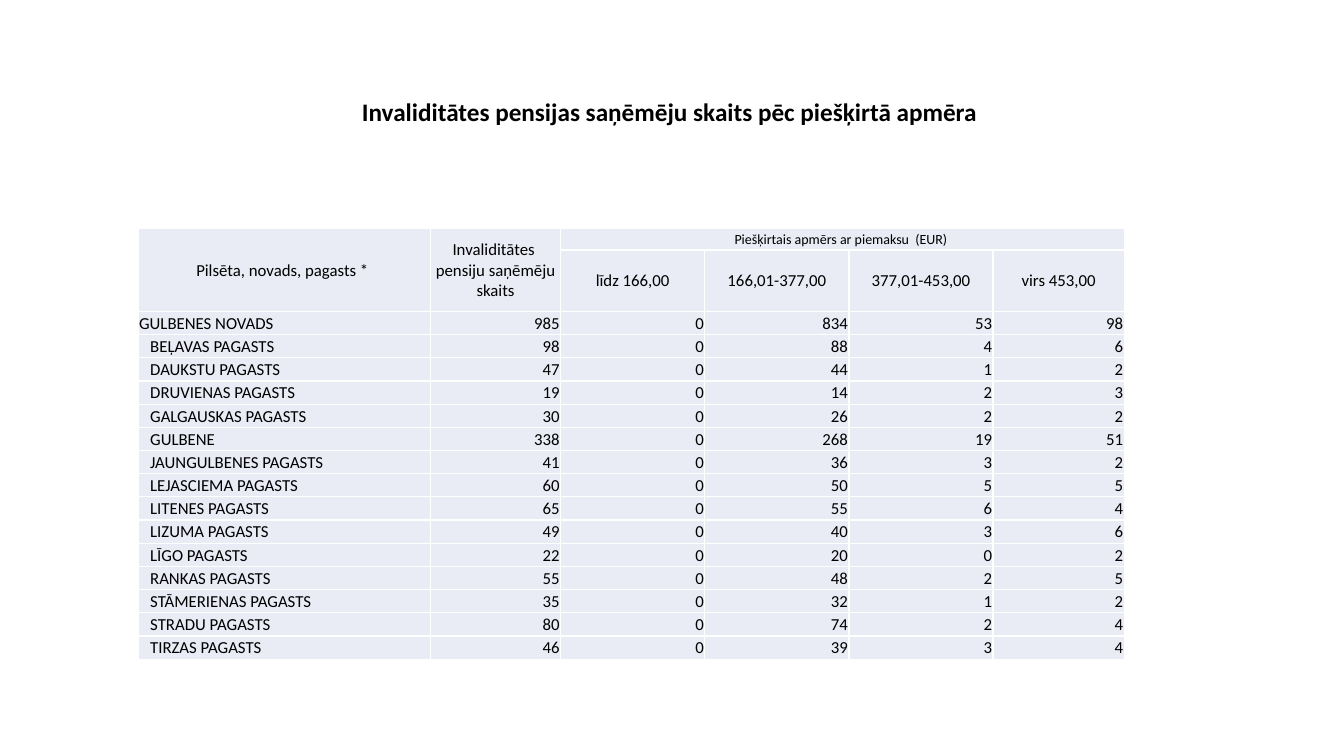
"""Build a slide with a table of disability pension recipients by granted amount."""
from pptx import Presentation
from pptx.dml.color import RGBColor
from pptx.enum.text import MSO_ANCHOR, PP_ALIGN
from pptx.util import Inches, Pt

TITLE = "Invaliditātes pensijas saņēmēju skaits pēc piešķirtā apmēra "
PLACE_HEADING = "Pilsēta, novads, pagasts * "
TOTAL_HEADING = "Invaliditātes  pensiju saņēmēju skaits"
AMOUNT_HEADING = "Piešķirtais apmērs ar piemaksu  (EUR) "
AMOUNT_BANDS = ["līdz 166,00", "166,01-377,00", "377,01-453,00", "virs 453,00"]
RECIPIENTS = [
    ("GULBENES NOVADS", 985, 0, 834, 53, 98),
    ("BEĻAVAS PAGASTS", 98, 0, 88, 4, 6),
    ("DAUKSTU PAGASTS", 47, 0, 44, 1, 2),
    ("DRUVIENAS PAGASTS", 19, 0, 14, 2, 3),
    ("GALGAUSKAS PAGASTS", 30, 0, 26, 2, 2),
    ("GULBENE", 338, 0, 268, 19, 51),
    ("JAUNGULBENES PAGASTS", 41, 0, 36, 3, 2),
    ("LEJASCIEMA PAGASTS", 60, 0, 50, 5, 5),
    ("LITENES PAGASTS", 65, 0, 55, 6, 4),
    ("LIZUMA PAGASTS", 49, 0, 40, 3, 6),
    ("LĪGO PAGASTS", 22, 0, 20, 0, 2),
    ("RANKAS PAGASTS", 55, 0, 48, 2, 5),
    ("STĀMERIENAS PAGASTS", 35, 0, 32, 1, 2),
    ("STRADU PAGASTS", 80, 0, 74, 2, 4),
    ("TIRZAS PAGASTS", 46, 0, 39, 3, 4),
]

BLACK = RGBColor(0x00, 0x00, 0x00)
PALE_BLUE = RGBColor(0xE9, 0xEB, 0xF5)
LEFT, CENTER, RIGHT = PP_ALIGN.LEFT, PP_ALIGN.CENTER, PP_ALIGN.RIGHT
MIDDLE = MSO_ANCHOR.MIDDLE

COLUMN_WIDTHS = [2.9, 1.29, 1.43, 1.43, 1.43, 1.3]
ROW_HEIGHTS = [0.21, 0.56] + [0.23] * len(RECIPIENTS)
HEADER_ROWS = 2
FIRST_BAND = 2
CELL_INSET = 0.01
PARISH_INDENT = 0.12


def set_all(target, values):
    for name, value in values.items():
        setattr(target, name, value)


def write(frame, text, size, align, bold=False):
    paragraph = frame.paragraphs[0]
    paragraph.alignment = align
    run = paragraph.add_run()
    run.text = text
    set_all(run.font, {"name": "Calibri", "size": Pt(size), "bold": bold})
    run.font.color.rgb = BLACK
    return paragraph


def fill_cell(cell, text, align, size=12, indent=CELL_INSET):
    write(cell.text_frame, text, size, align)
    set_all(cell, {
        "vertical_anchor": MIDDLE,
        "margin_left": Inches(indent),
        "margin_top": Inches(CELL_INSET),
        "margin_right": Inches(CELL_INSET),
        "margin_bottom": 0,
    })


def add_title(slide):
    box = slide.shapes.add_textbox(Inches(0.92), Inches(0.4), Inches(11.5), Inches(1.45))
    set_all(box.text_frame, {"word_wrap": True, "vertical_anchor": MIDDLE})
    write(box.text_frame, TITLE, 18, CENTER, bold=True).line_spacing = 0.9


def add_recipients(slide):
    table = slide.shapes.add_table(
        len(ROW_HEIGHTS), len(COLUMN_WIDTHS), Inches(1.37), Inches(2.27),
        Inches(sum(COLUMN_WIDTHS)), Inches(sum(ROW_HEIGHTS))).table
    set_all(table, {"first_row": False, "horz_banding": False})
    for column, width in zip(table.columns, COLUMN_WIDTHS):
        column.width = Inches(width)
    for row, height in zip(table.rows, ROW_HEIGHTS):
        row.height = Inches(height)
    for cell in table.iter_cells():
        cell.fill.solid()
        cell.fill.fore_color.rgb = PALE_BLUE

    for column, heading in enumerate([PLACE_HEADING, TOTAL_HEADING]):
        table.cell(0, column).merge(table.cell(HEADER_ROWS - 1, column))
        fill_cell(table.cell(0, column), heading, CENTER)
    table.cell(0, FIRST_BAND).merge(table.cell(0, len(COLUMN_WIDTHS) - 1))
    fill_cell(table.cell(0, FIRST_BAND), AMOUNT_HEADING, CENTER, size=10)
    for column, band in enumerate(AMOUNT_BANDS, FIRST_BAND):
        fill_cell(table.cell(1, column), band, CENTER)

    for row, (place, *counts) in enumerate(RECIPIENTS, HEADER_ROWS):
        indent = CELL_INSET if row == HEADER_ROWS else PARISH_INDENT
        fill_cell(table.cell(row, 0), place, LEFT, indent=indent)
        for column, count in enumerate(counts, 1):
            fill_cell(table.cell(row, column), str(count), RIGHT)


def main():
    deck = Presentation()
    set_all(deck, {"slide_width": Inches(13.33), "slide_height": Inches(7.5)})
    slide = deck.slides.add_slide(deck.slide_layouts[6])
    add_title(slide)
    add_recipients(slide)
    deck.save("out.pptx")


if __name__ == "__main__":
    main()
